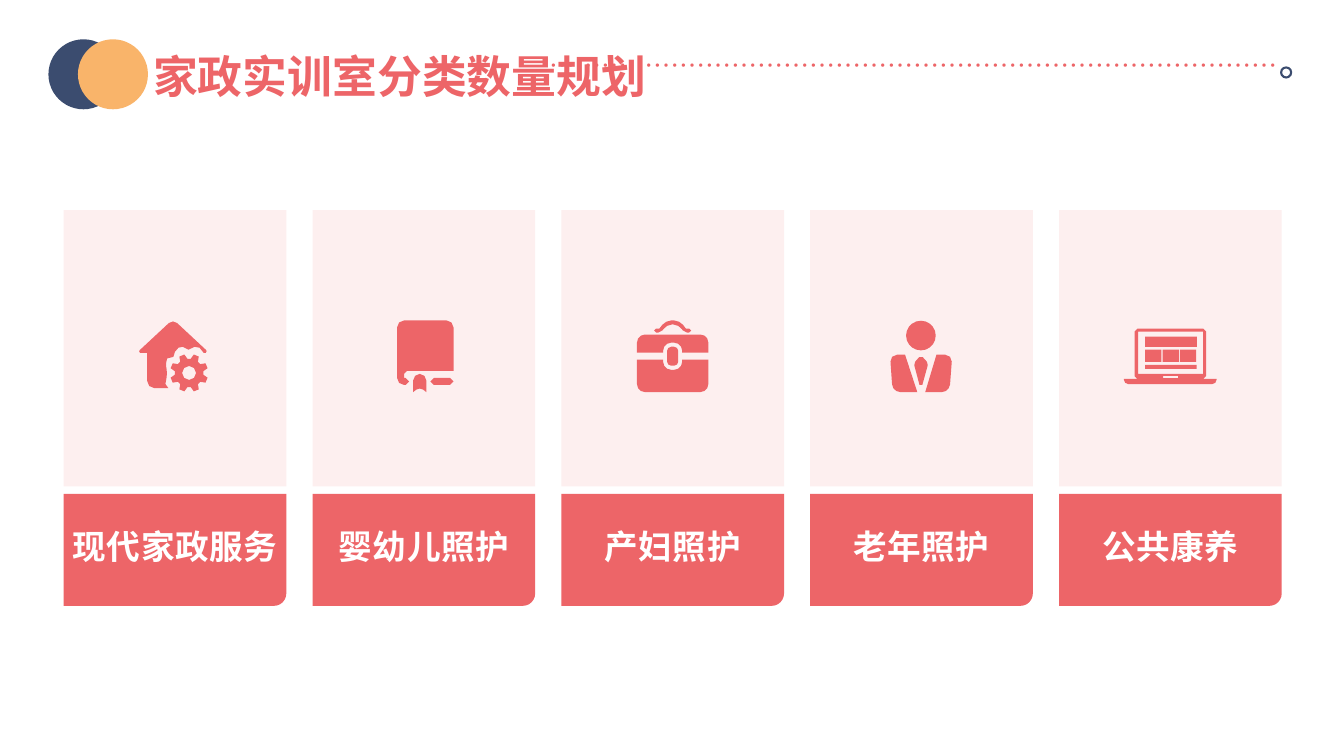
"""Build the slide of five training room types, each with an icon card."""
from math import dist, pi, cos, sin

from pptx import Presentation
from pptx.dml.color import RGBColor
from pptx.enum.shapes import MSO_SHAPE as Kind
from pptx.enum.text import MSO_ANCHOR as Anchor, MSO_AUTO_SIZE as Auto, PP_ALIGN as Align
from pptx.oxml.ns import qn
from pptx.util import Pt

CORAL = RGBColor(0xED, 0x65, 0x68)
NAVY = RGBColor(0x3B, 0x4C, 0x6F)
AMBER = RGBColor(0xF9, 0xB4, 0x6A)
WHITE = RGBColor(0xFF, 0xFF, 0xFF)
SANS = "Noto Sans CJK SC"

TITLE = "家政实训室分类数量规划"
DOTS = "…………………………………………………………………………"


def box(left, top, right, low, rad=0):
    """Return the corners of a box, each with its rounding radius."""
    return [(left, top, rad), (right, top, rad), (right, low, rad), (left, low, rad)]


def disc(x, y, rad):
    """Return a circle as a fully rounded box."""
    return box(x - rad, y - rad, x + rad, y + rad, rad)


def gear(x, y, teeth, tip, root):
    """Return the outline of a gear wheel."""
    step = 2 * pi / teeth
    ring = []
    for i in range(teeth):
        for part, rad in ((0.15, root), (0.32, tip), (0.68, tip), (0.85, root)):
            turn = (i + part) * step
            ring.append((x + rad * cos(turn), y + rad * sin(turn), 0))
    return ring


HOUSE = [
    [(-4.7, 22.7, 0), (-6.8, 19.8, 0), (-5.4, 11.9, 3), (-6.8, 4.7, 3), (-5.5, 1.5, 0),
     (-1.1, 0.4, 0), (0, -3.2, 0), (2.5, -6.1, 0), (5.4, -6.8, 0), (9.7, -4.7, 0),
     (14, -6.8, 0), (17.6, -6.1, 0), (20.5, -2.5, 0), (23.5, -2.5, 1.5), (22, -4.7, 0),
     (-1.4, -26.5, 4), (-24.8, -4.7, 0), (-26.5, -2.5, 1.5), (-19.8, -2.5, 0),
     (-19.8, 22.7, 5)],
    gear(10.1, 11.9, 8, 13.6, 10.2),
    disc(10.1, 11.9, 5)]
BOOK = [
    [(21.2, 10.4, 0), (21.2, -25.6, 5), (-19.1, -25.6, 5), (-19.1, 20.5, 5),
     (-10.5, 20.5, 2.5), (-10.5, 15.5, 2.5), (-14, 15.5, 0), (-14, 10.4, 2)],
    [(-7.6, 12.6, 4.7), (1.8, 12.6, 4.7), (1.8, 25.6, 0), (-2.9, 22, 3), (-7.6, 25.6, 0)],
    box(4.7, 15.5, 21.2, 20.5, 2.5)]
BAG = [
    [(-13.2, -19.8, 1.4), (-9.4, -19.8, 0), (-5, -25.6, 4), (5, -25.6, 4),
     (9.4, -19.8, 0), (13.2, -19.8, 1.4), (13.2, -16.9, 1.4), (8.2, -16.9, 2),
     (4.5, -22.7, 4), (-4.5, -22.7, 4), (-8.2, -16.9, 2), (-13.2, -16.9, 1.4)],
    [(-25.5, -2.5, 0), (-25.5, -15.5, 5.7), (25.5, -15.5, 5.7), (25.5, -2.5, 0),
     (6.8, -2.5, 0), (6.8, -9.7, 5.7), (-6.8, -9.7, 5.7), (-6.8, -2.5, 0)],
    [(-25.5, 2.5, 0), (-25.5, 25.6, 5.7), (25.5, 25.6, 5.7), (25.5, 2.5, 0),
     (6.8, 2.5, 0), (6.8, 9.7, 5.7), (-6.8, 9.7, 5.7), (-6.8, 2.5, 0)],
    box(-4, -6.8, 4, 6.8, 3)]
MAN = [
    disc(-0.4, -14.8, 10.6),
    [(-0.4, -0.8, 2), (4.9, 5, 1.5), (0.6, 20.5, 0), (-1.4, 20.5, 0), (-5.5, 5, 1.5)],
    [(10.7, -1.1, 0), (22, -1.1, 5), (20, 25.6, 5.5), (2.7, 25.6, 0)],
    [(-22.5, -1.1, 5), (-11.7, -1.1, 0), (-3, 25.6, 0), (-20.6, 25.6, 5.5)]]
LAPTOP = [
    box(-25.5, -19.8, 25.5, 16.2, 2),
    box(-23, -17.6, 23.5, 12.6),
    box(-18, -14, 19, -6.8),
    *[box(x, -4.7, x + 11.6, 4) for x in (-18, -5.6, 6.8)],
    box(-18, 6.1, 18.7, 9),
    box(-5.2, 14, 5.5, 15.5),
    [(-33.2, 16.2, 0), (33, 16.2, 0), (33, 19.8, 3), (-33.2, 19.8, 3)]]

ROOMS = [("现代家政服务", HOUSE), ("婴幼儿照护", BOOK), ("产妇照护", BAG),
         ("老年照护", MAN), ("公共康养", LAPTOP)]
FIRST, STEP, WIDE = 125, 177.75, 159
CARD, TAB, ICON, LABEL = 248.8, 392.8, 254.5, 389.9


def paint(shape, fill=None, line=None):
    """Set fill and line, and drop the shadow."""
    shape.shadow.inherit = False
    if fill is None:
        shape.fill.background()
    else:
        shape.fill.solid()
        shape.fill.fore_color.rgb = fill
    if line is None:
        shape.line.fill.background()
    else:
        shape.line.color.rgb = line
        shape.line.width = Pt(1.5)
    return shape


def place(shapes, kind, x, y, w, h):
    """Add a preset shape, measured in points."""
    return shapes.add_shape(kind, Pt(x), Pt(y), Pt(w), Pt(h))


def block(shapes, x, y, high, adj):
    """Add a turned block around a centre, so its round corner is low right."""
    part = place(shapes, Kind.ROUND_1_RECTANGLE, x - high / 2, y - WIDE / 2, high, WIDE)
    part.rotation = 90
    part.adjustments[0] = adj
    return paint(part, CORAL)


def write(frame, text, size, color, align, face=SANS, bold=False, gap=0):
    """Put one styled line into a text frame."""
    frame.text = text
    para = frame.paragraphs[0]
    para.alignment = align
    run = para.runs[0]
    run.font.size, run.font.bold, run.font.name = Pt(size), bold, face
    run.font.color.rgb = color
    props = run.font._element
    if gap:
        props.set("spc", str(gap))
    east = props.makeelement(qn("a:ea"), {"typeface": SANS})
    props.find(qn("a:latin")).addnext(east)
    return para


def plain(shapes, x, y, w, h):
    """Add a text box with no margins and return its frame."""
    frame = shapes.add_textbox(Pt(x), Pt(y), Pt(w), Pt(h)).text_frame
    frame.margin_left = frame.margin_right = frame.margin_top = frame.margin_bottom = 0
    frame.vertical_anchor, frame.word_wrap = Anchor.MIDDLE, True
    return frame


def curve(start, peak, end, t):
    """Return one coordinate of a round corner at a share of its way."""
    first, last = start + 0.55 * (peak - start), end + 0.55 * (peak - end)
    s = 1 - t
    return s ** 3 * start + 3 * s * s * t * first + 3 * s * t * t * last + t ** 3 * end


def smooth(ring):
    """Turn corners with radii into the points of a rounded outline."""
    out = []
    for i, (x, y, rad) in enumerate(ring):
        if not rad:
            out.append((x, y))
            continue
        ends = []
        for ax, ay, _ in (ring[i - 1], ring[(i + 1) % len(ring)]):
            part = rad / dist((x, y), (ax, ay))
            ends.append((x + (ax - x) * part, y + (ay - y) * part))
        (px, py), (qx, qy) = ends
        count = max(1, round(rad / 2))
        for k in range(count + 1):
            t = k / count
            out.append((curve(px, x, qx, t), curve(py, y, qy, t)))
    return out


def draw(shapes, rings, x, y):
    """Draw an icon of several outlines around a centre."""
    pen = None
    for ring in rings:
        spots = [(Pt(x + dx), Pt(y + dy)) for dx, dy in smooth(ring)]
        if pen is None:
            pen = shapes.build_freeform(*spots[0])
        else:
            pen.move_to(*spots[0])
        pen.add_line_segments(spots[1:], close=True)
    paint(pen.convert_to_shape(), CORAL)


def main():
    """Compose the slide and save it."""
    deck = Presentation()
    deck.slide_width, deck.slide_height = Pt(960), Pt(540)
    slide = deck.slides.add_slide(deck.slide_layouts[5])
    shapes = slide.shapes

    head = shapes.title
    head.left, head.top, head.width, head.height = Pt(102.2), Pt(31), Pt(370), Pt(46)
    frame = head.text_frame
    write(frame, TITLE, 32, CORAL, Align.LEFT, "Arial", True)
    frame.word_wrap, frame.auto_size = False, Auto.SHAPE_TO_FIT_TEXT
    frame.vertical_anchor = Anchor.TOP

    for x, color in ((34.6, NAVY), (55.7, AMBER)):
        paint(place(shapes, Kind.OVAL, x, 28.1, 50, 50), color)
    trail = plain(shapes, 219.6, 35.3, 693.4, 25.9)
    write(trail, DOTS, 18.6, CORAL, Align.RIGHT).line_spacing = 0.88
    paint(place(shapes, Kind.OVAL, 915.1, 48.2, 7.2, 7.2), line=NAVY)

    for i, (name, icon) in enumerate(ROOMS):
        mid = FIRST + i * STEP
        block(shapes, mid, TAB, 80, 0.11)
        card = block(shapes, mid, CARD, 197.3, 0)
        tint = card._element.spPr.find(qn("a:solidFill"))[0]
        tint.append(tint.makeelement(qn("a:alpha"), {"val": "10000"}))
        label = plain(shapes, mid - 75.5, LABEL - 12, 151, 24)
        write(label, name, 24, WHITE, Align.CENTER, bold=True, gap=40)
        draw(shapes, icon, mid, ICON)

    deck.save("out.pptx")


if __name__ == "__main__":
    main()
